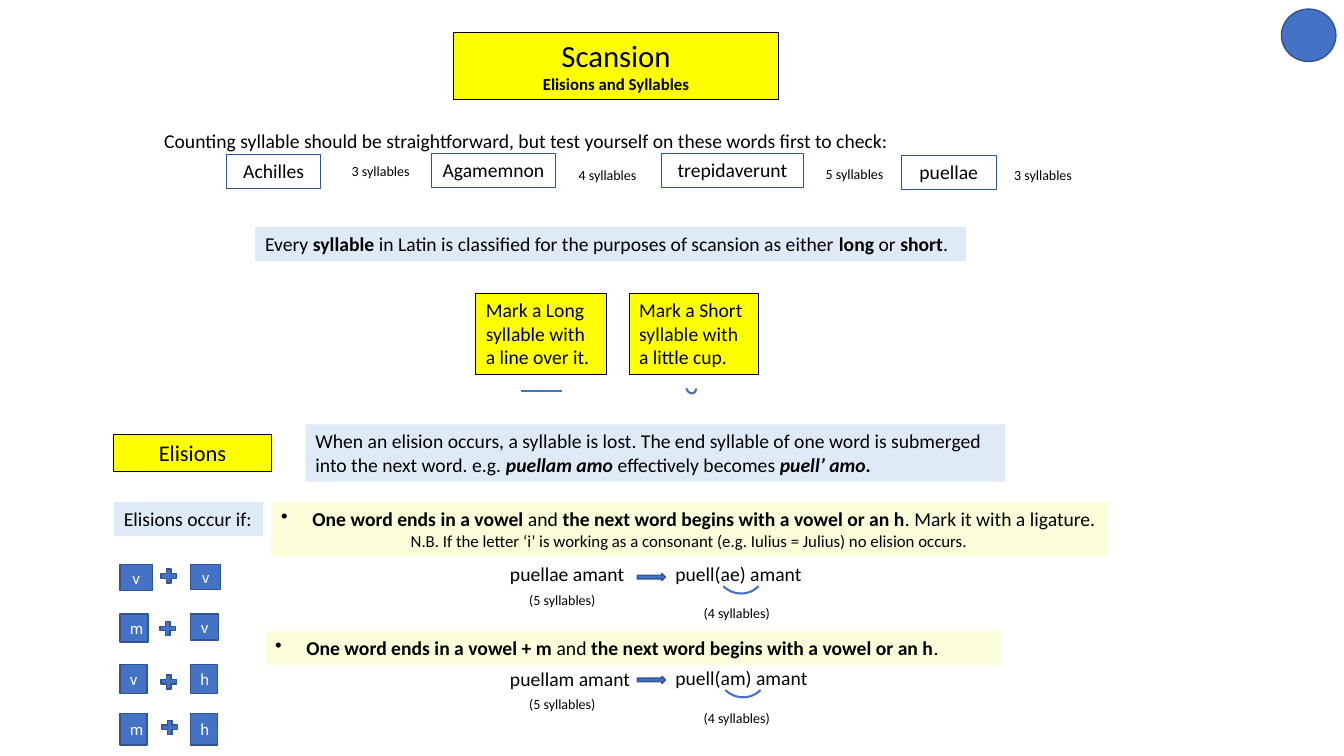
from lxml import etree
from pptx import Presentation
from pptx.dml.color import RGBColor
from pptx.enum import shapes, text
from pptx.oxml import ns
from pptx.util import Inches, Pt

COLORS = {
    "black": "000000", "white": "FFFFFF", "yellow": "FFFF00", "pale blue": "DEEBF7",
    "cream": "FBFED8", "blue": "4472C4", "navy": "325491",
}
LEFT, CENTER = text.PP_ALIGN.LEFT, text.PP_ALIGN.CENTER
TOP, MIDDLE = text.MSO_ANCHOR.TOP, text.MSO_ANCHOR.MIDDLE
KIND = shapes.MSO_SHAPE

prs = Presentation()
prs.slide_width, prs.slide_height = Inches(13.33), Inches(7.5)
s = prs.slides.add_slide(prs.slide_layouts[6])


def draw(kind, at, fill=None, line=None, width=1):
    sp = s.shapes.add_shape(kind, *map(Inches, at))
    sp.shadow.inherit = False
    if fill:
        sp.fill.solid()
        sp.fill.fore_color.rgb = RGBColor.from_string(COLORS[fill])
    else:
        sp.fill.background()
    if line:
        sp.line.color.rgb = RGBColor.from_string(COLORS[line])
        sp.line.width = Pt(width)
    else:
        sp.line.fill.background()
    return sp


def write(at, paragraphs, fill=None, line=None, width=0.75, align=LEFT, anchor=TOP,
          color="black", wrap=True, italic=False):
    """Add a text block; paragraphs are (wording, size), with *bold* between asterisks.

    With italic set, the bold words are italic too.
    """
    if fill or line:
        sp = draw(KIND.RECTANGLE, at, fill, line, width)
    else:
        sp = s.shapes.add_textbox(*map(Inches, at))
    tf = sp.text_frame
    tf.word_wrap = wrap
    if not wrap:
        tf.auto_size = text.MSO_AUTO_SIZE.SHAPE_TO_FIT_TEXT
    tf.vertical_anchor = anchor
    for i, (wording, size) in enumerate(paragraphs):
        p = tf.add_paragraph() if i else tf.paragraphs[0]
        p.alignment = align
        p.font.name, p.font.size = "Calibri", Pt(size)
        p.font.color.rgb = RGBColor.from_string(COLORS[color])
        for j, part in enumerate(wording.split("*")):
            if part:
                r = p.add_run()
                r.text = part
                if j % 2:
                    r.font.bold = True
                    r.font.italic = italic or None
    return tf


# Title and syllable counting
write((4.5, 0.32, 3.22, 0.67), [("Scansion", 22), ("*Elisions and Syllables*", 12)],
      "yellow", "black", align=CENTER)
draw(KIND.OVAL, (12.71, 0.09, 0.54, 0.52), "blue", "navy")
write((1.53, 1.23, 7.68, 0.34),
      [("Counting syllable should be straightforward, but test yourself on these words "
        "first to check:", 14)], "white")
for word, x, y, w, count, count_x, count_y in [
    ("Achilles", 2.25, 1.53, 0.93, 3, 3.39, 1.56),
    ("Agamemnon", 4.28, 1.52, 1.23, 4, 5.64, 1.6),
    ("trepidaverunt", 6.56, 1.52, 1.41, 5, 8.09, 1.59),
    ("puellae", 8.94, 1.54, 0.94, 3, 9.96, 1.6),
]:
    write((x, y, w, 0.34), [(word, 14)], line="navy", align=CENTER)
    write((count_x, count_y, 0.82, 0.27), [(f"{count} syllables", 10)])

# Long and short syllables
write((2.53, 2.25, 7.05, 0.34),
      [("Every *syllable* in Latin is classified for the purposes of scansion as either "
        "*long* or *short*.", 14)], "pale blue")
write((4.72, 2.91, 1.3, 0.81), [("Mark a Long syllable with a line over it.", 14)],
      "yellow", "black")
write((6.24, 2.91, 1.28, 0.81), [("Mark a Short syllable with a little cup.", 14)],
      "yellow", "black")
long_mark = s.shapes.add_connector(shapes.MSO_CONNECTOR.STRAIGHT, Inches(5.17), Inches(3.88),
                                   Inches(5.57), Inches(3.88))
long_mark.line.color.rgb = RGBColor.from_string(COLORS["blue"])
long_mark.line.width = Pt(1.5)
etree.SubElement(long_mark._element.spPr, ns.qn("a:effectLst"))
short_mark = draw(KIND.ARC, (6.79, 3.79, 0.13, 0.1), line="blue", width=1.5)
short_mark.adjustments[1] = 36.065
short_mark.rotation = 255.1
short_mark._element.spPr.find(ns.qn("a:xfrm")).set("flipH", "1")

# Elision rules
write((1.13, 4.31, 1.56, 0.37), [("Elisions", 16)], "yellow", "black", align=CENTER)
write((3.03, 4.21, 6.94, 0.57),
      [("When an elision occurs, a syllable is lost. The end syllable of one word is "
        "submerged into the next word. e.g. *puellam amo *effectively becomes "
        "*puell’ amo.*", 14)], "pale blue", italic=True)
write((1.13, 4.98, 1.48, 0.34), [("Elisions occur if:", 14)], "pale blue")
vowel_rule = write(
    (2.69, 4.98, 8.29, 0.54),
    [("*One word ends in a vowel *and *the next word begins with a vowel or an h*. "
      "Mark it with a ligature.", 14),
     ("N.B. If the letter ‘i’ is working as a consonant (e.g. Iulius = Julius) "
      "no elision occurs.", 12)], "cream")
vowel_rule.paragraphs[1].alignment = CENTER
m_rule = write(
    (2.63, 6.26, 7.29, 0.34),
    [("*One word ends in a vowel + m *and *the next word begins with a vowel or an h*.", 14)],
    "cream")
for tf in (vowel_rule, m_rule):
    pPr = tf.paragraphs[0]._p.get_or_add_pPr()
    pPr.set("marL", str(Inches(0.31)))
    pPr.set("indent", str(Inches(-0.31)))
    bullet = etree.Element(ns.qn("a:buChar"), char="•")
    pPr.find(ns.qn("a:defRPr")).addprevious(bullet)

# Worked examples
for before, after, after_w, y, after_y, count_y, lost_y, arrow_y, arc_x, arc_y in [
    ("puellae amant", "puell(ae) amant", 1.47, 5.53, 5.53, 5.82, 5.95, 5.69, 7.1, 5.39),
    ("puellam amant", "puell(am) amant", 1.53, 6.57, 6.56, 6.85, 6.99, 6.71, 7.12, 6.42),
]:
    write((4.96, y, 1.47, 0.34), [(before, 14)])
    write((5.15, count_y, 0.9, 0.27), [("(5 syllables)", 10)], wrap=False)
    write((6.6, after_y, after_w, 0.34), [(after, 14)], wrap=False)
    write((6.88, lost_y, 0.9, 0.27), [("(4 syllables)", 10)], wrap=False)
    draw(KIND.RIGHT_ARROW, (6.32, arrow_y, 0.28, 0.07), "blue", "navy")
    ligature = draw(KIND.ARC, (arc_x, arc_y, 0.49, 0.5), line="blue", width=1.5)
    ligature.rotation = 134.3

# Letter pairs that elide
for end, start, y, end_size, start_size, plus_x, plus_y in [
    ("v", "v", 5.6, (0.32, 0.26), (0.3, 0.25), 1.57, 5.62),
    ("m", "v", 6.09, (0.28, 0.28), (0.28, 0.26), 1.56, 6.14),
    ("v", "h", 6.59, (0.27, 0.29), (0.27, 0.29), 1.57, 6.67),
    ("m", "h", 7.08, (0.27, 0.31), (0.27, 0.31), 1.58, 7.12),
]:
    for letter, x, size in ((end, 1.19, end_size), (start, 1.89, start_size)):
        write((x, y, *size), [(letter, 12)], "blue", "navy", 1, CENTER, MIDDLE, "white")
    draw(KIND.MATH_PLUS, (plus_x, plus_y, 0.21, 0.19), "blue", "navy")

prs.save("out.pptx")
